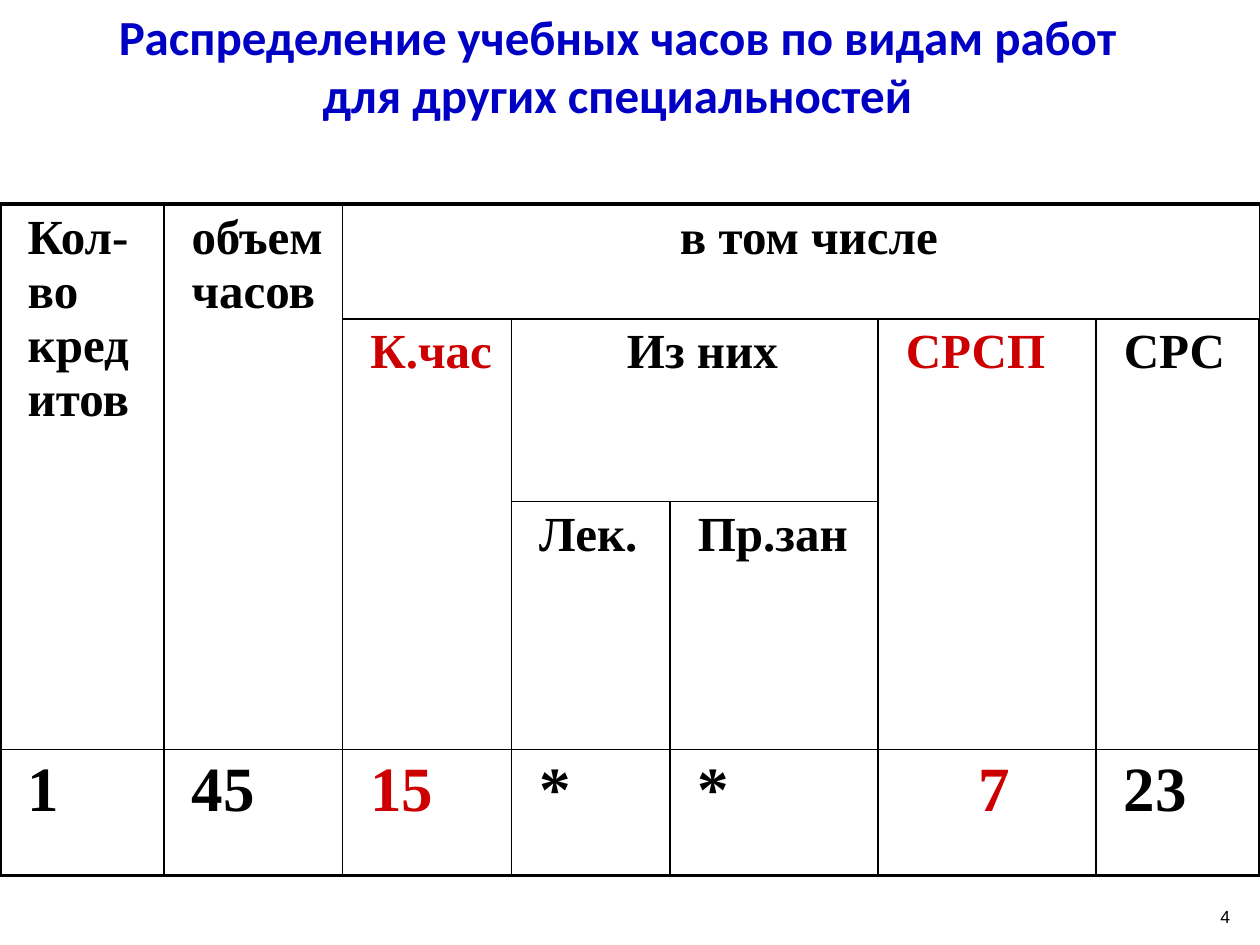
from lxml.etree import SubElement
from pptx import Presentation
from pptx.dml.color import RGBColor
from pptx.enum.text import MSO_ANCHOR, PP_ALIGN
from pptx.oxml.ns import qn
from pptx.util import Inches, Pt

BLACK = RGBColor(0x00, 0x00, 0x00)
RED = RGBColor(0xCC, 0x00, 0x00)
BLUE = RGBColor(0x00, 0x00, 0xC4)

presentation = Presentation()
presentation.slide_width = Inches(10)
presentation.slide_height = Inches(7.5)
slide = presentation.slides.add_slide(presentation.slide_layouts[6])


def style_font(paragraph, name, size, color, bold):
    font = paragraph.font
    font.name, font.size, font.bold = name, Pt(size), bold
    font.color.rgb = color


def add_border(cell, side, width):
    line = SubElement(cell._tc.get_or_add_tcPr(), qn(f"a:ln{side}"), w=str(Pt(width)))
    fill = SubElement(line, qn("a:solidFill"))
    SubElement(fill, qn("a:srgbClr"), val=str(BLACK))


# Slide number
page_number = slide.shapes.add_textbox(
    Inches(9.46), Inches(7.01), Inches(0.4), Inches(0.4)).text_frame
page_number.word_wrap = True
page_number.vertical_anchor = MSO_ANCHOR.BOTTOM
page_number.text = "4"
page_number.paragraphs[0].alignment = PP_ALIGN.RIGHT
style_font(page_number.paragraphs[0], "Arial", 10, BLACK, False)

# Grid of the hours table
column_widths = [1.3, 1.42, 1.34, 1.26, 1.65, 1.73, 1.3]
row_heights = [0.91, 1.45, 1.45, 1]
last_row, last_column = len(row_heights) - 1, len(column_widths) - 1
hours = slide.shapes.add_table(
    len(row_heights), len(column_widths), 0, Inches(1.62),
    Inches(sum(column_widths)), Inches(sum(row_heights))).table
hours.first_row = hours.horz_banding = False
for column, width in zip(hours.columns, column_widths):
    column.width = Inches(width)
for row, height in zip(hours.rows, row_heights):
    row.height = Inches(height)

# Borders: heavy around the table, thin inside
for r in range(last_row + 1):
    for c in range(last_column + 1):
        cell = hours.cell(r, c)
        outer_sides = {"L": c == 0, "R": c == last_column,
                       "T": r == 0, "B": r == last_row}
        for side, is_outer in outer_sides.items():
            add_border(cell, side, 2.25 if is_outer else 1)
        cell.fill.background()

# Merged headings: first cell, last cell
for first, last in [((0, 0), (2, 0)), ((0, 1), (2, 1)), ((0, 2), (0, 6)),
                    ((1, 2), (2, 2)), ((1, 3), (1, 4)), ((1, 5), (2, 5)),
                    ((1, 6), (2, 6))]:
    hours.cell(*first).merge(hours.cell(*last))

# Wording, with None where a merged heading reaches
wording = [
    ["Кол-во кредитов", "объем часов", "в том числе", None, None, None, None],
    [None, None, "К.час", "Из них", None, "СРСП", "СРС"],
    [None, None, None, "Лек.", "Пр.зан", None, None],
    ["1", "45", "15", "*", "*", "7", "23"],
]
red_words = {"К.час", "СРСП", "15", "7"}
centred_words = {"в том числе", "Из них", "7"}
for r, words in enumerate(wording):
    size = 36 if r == last_row else 28
    for c, word in enumerate(words):
        if word is None:
            continue
        cell = hours.cell(r, c)
        cell.text = word
        paragraph = cell.text_frame.paragraphs[0]
        paragraph.alignment = PP_ALIGN.CENTER if word in centred_words else PP_ALIGN.LEFT
        paragraph.space_before = Pt(size * 0.2)
        properties = paragraph._p.get_or_add_pPr()
        properties.set("marL", str(Inches(0.12)))
        properties.set("indent", "0")
        style_font(paragraph, "Times New Roman", size,
                   RED if word in red_words else BLACK, True)

# Title
title = slide.shapes.add_textbox(0, 0, Inches(9.8), Inches(1.03)).text_frame
title.word_wrap = True
title.text = "Распределение учебных часов по видам работ\nдля других специальностей"
for paragraph in title.paragraphs:
    paragraph.alignment = PP_ALIGN.CENTER
    style_font(paragraph, "Calibri", 28, BLUE, True)

presentation.save("out.pptx")
